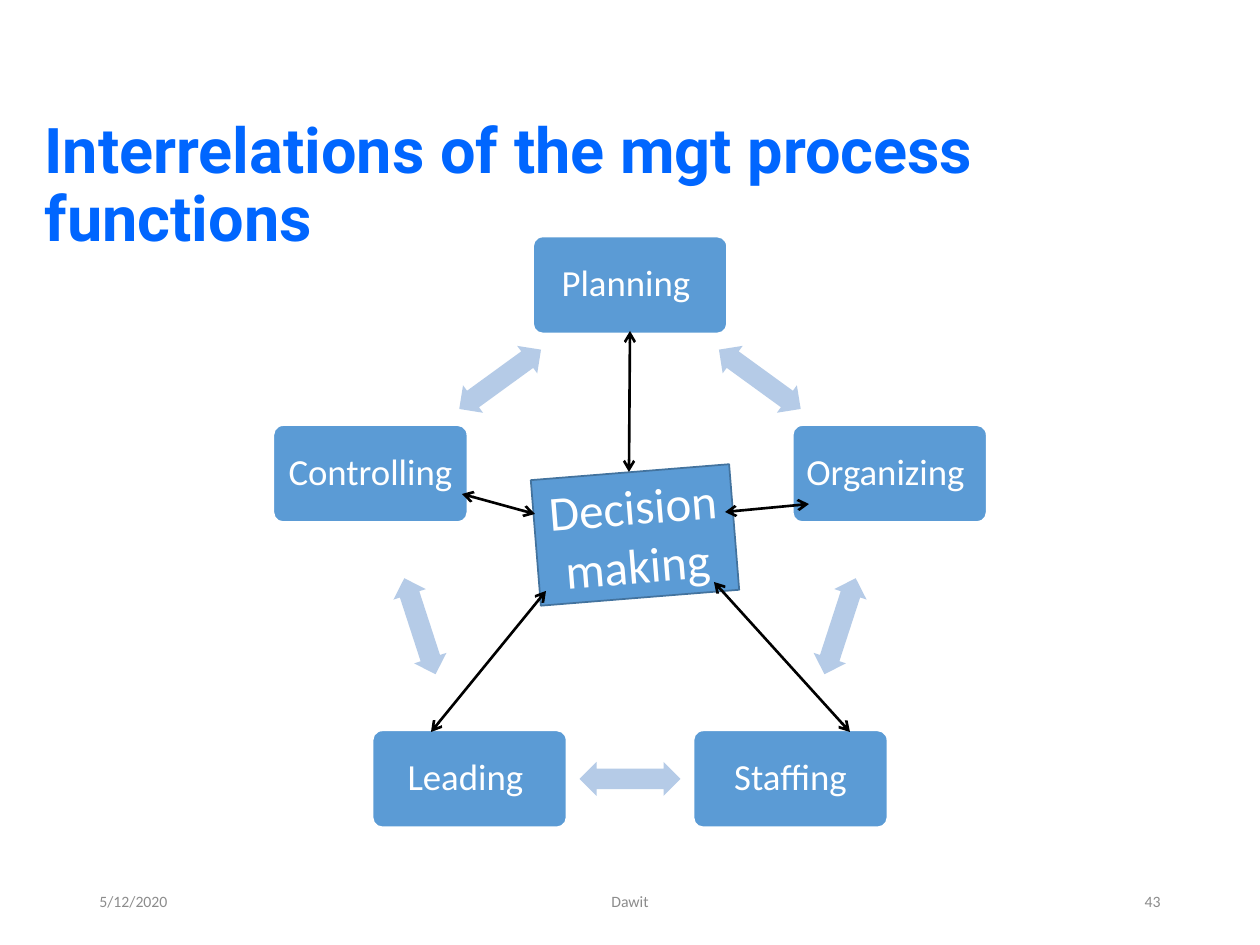
from math import cos, pi, sin

from lxml.etree import SubElement
from pptx import Presentation
from pptx.dml.color import RGBColor
from pptx.enum.shapes import MSO_CONNECTOR, MSO_SHAPE
from pptx.enum.text import MSO_ANCHOR, MSO_AUTO_SIZE, PP_ALIGN
from pptx.oxml.ns import qn
from pptx.util import Emu, Pt

COLORS = {
    "title": "0066FF", "node": "5B9BD5", "edge": "43739E", "arrow": "B5CBE7",
    "white": "FFFFFF", "black": "000000", "footer": "8C8C8C",
}
FUNCTIONS = ["Planning ", "Organizing ", "Staffing", "Leading ", "Controlling "]


def px(n):
    return Emu(round(n * 914400 / 126))


def rgb(name):
    return RGBColor.from_string(COLORS[name])


def write(shape, text, size, color, align, font="Calibri", bold=False, spacing=1.0):
    tf = shape.text_frame
    tf.text = text
    tf.word_wrap = True
    tf.auto_size = MSO_AUTO_SIZE.NONE
    tf.vertical_anchor = MSO_ANCHOR.MIDDLE
    p = tf.paragraphs[0]
    p.alignment = align
    p.line_spacing = spacing
    f = p.runs[0].font
    f.name, f.size, f.bold = font, Pt(size), bold
    f.color.rgb = rgb(color)
    return tf


def add_block(s, kind, cx, cy, w, h, fill, line=None, rotation=0):
    """Add a flat shape centred on (cx, cy)."""
    sp = s.shapes.add_shape(kind, px(cx - w / 2), px(cy - h / 2), px(w), px(h))
    sp.shadow.inherit = False
    sp.rotation = rotation
    sp.fill.solid()
    sp.fill.fore_color.rgb = rgb(fill)
    if line:
        sp.line.color.rgb = rgb(line)
        sp.line.width = Pt(1)
    else:
        sp.line.fill.background()
    return sp


def add_title(s, x, y, w, h):
    title = s.shapes.title
    title.left, title.top, title.width, title.height = px(x), px(y), px(w), px(h)
    write(title, "Interrelations of the mgt process functions", 36, "title",
          PP_ALIGN.LEFT, "Roboto", True, 0.9)


def add_cycle(s, cx, cy, radius):
    """Function boxes on a circle, with an arrow midway between neighbours."""
    step = 2 * pi / len(FUNCTIONS)
    centers = [(cx + radius * sin(i * step), cy - radius * cos(i * step))
               for i in range(len(FUNCTIONS))]
    for i, (name, (x, y)) in enumerate(zip(FUNCTIONS, centers)):
        node = add_block(s, MSO_SHAPE.ROUNDED_RECTANGLE, x, y, 194, 97, "node", "white")
        node.adjustments[0] = 0.1
        tf = write(node, name, 21, "white", PP_ALIGN.CENTER, spacing=0.9)
        # The rounded corners narrow the text area, so keep the side margins small
        tf.margin_left = tf.margin_right = px(9)

        next_x, next_y = centers[(i + 1) % len(centers)]
        arrow = add_block(s, MSO_SHAPE.LEFT_RIGHT_ARROW, (x + next_x) / 2,
                          (y + next_y) / 2, 101, 34, "arrow", rotation=36 + 72 * i)
        arrow.adjustments[0], arrow.adjustments[1] = 0.6, 0.5


def add_link(s, x1, y1, x2, y2):
    """Line with an open arrowhead at both ends."""
    link = s.shapes.add_connector(MSO_CONNECTOR.STRAIGHT, px(x1), px(y1), px(x2), px(y2))
    link.line.color.rgb = rgb("black")
    link.line.width = Pt(1.5)
    ln = link.line._get_or_add_ln()
    for end in ("a:headEnd", "a:tailEnd"):
        SubElement(ln, qn(end), type="arrow")
    SubElement(link._element.spPr, qn("a:effectLst"))


def add_decision(s, cx, cy):
    """Tilted centre box and its links to the five functions."""
    box = add_block(s, MSO_SHAPE.RECTANGLE, cx, cy, 199, 126, "node", "edge", -4.6)
    write(box, "Decision making", 28, "white", PP_ALIGN.CENTER)
    # Link ends as offsets from the centre of the box
    for x1, y1, x2, y2 in [(-5, -204, -6, -63), (-173, -41, -100, -21),
                           (90, -23, 174, -31), (79, 47, 215, 197),
                           (-89, 56, -204, 197)]:
        add_link(s, cx + x1, cy + y1, cx + x2, cy + y2)


def add_footer(s, y, h):
    for x, w, text, align in [(87, 284, "5/12/2020", PP_ALIGN.LEFT),
                              (417, 426, "Dawit", PP_ALIGN.CENTER),
                              (889, 284, "43", PP_ALIGN.RIGHT)]:
        write(s.shapes.add_textbox(px(x), px(y), px(w), px(h)), text, 9, "footer", align)


def main():
    prs = Presentation()
    prs.slide_width, prs.slide_height = px(1260), px(945)
    s = prs.slides.add_slide(prs.slide_layouts[5])
    add_title(s, 32, 146, 1207, 82)
    add_cycle(s, 630, 558, 273)
    add_decision(s, 635, 535)
    add_footer(s, 876, 50)
    prs.save("out.pptx")


if __name__ == "__main__":
    main()
